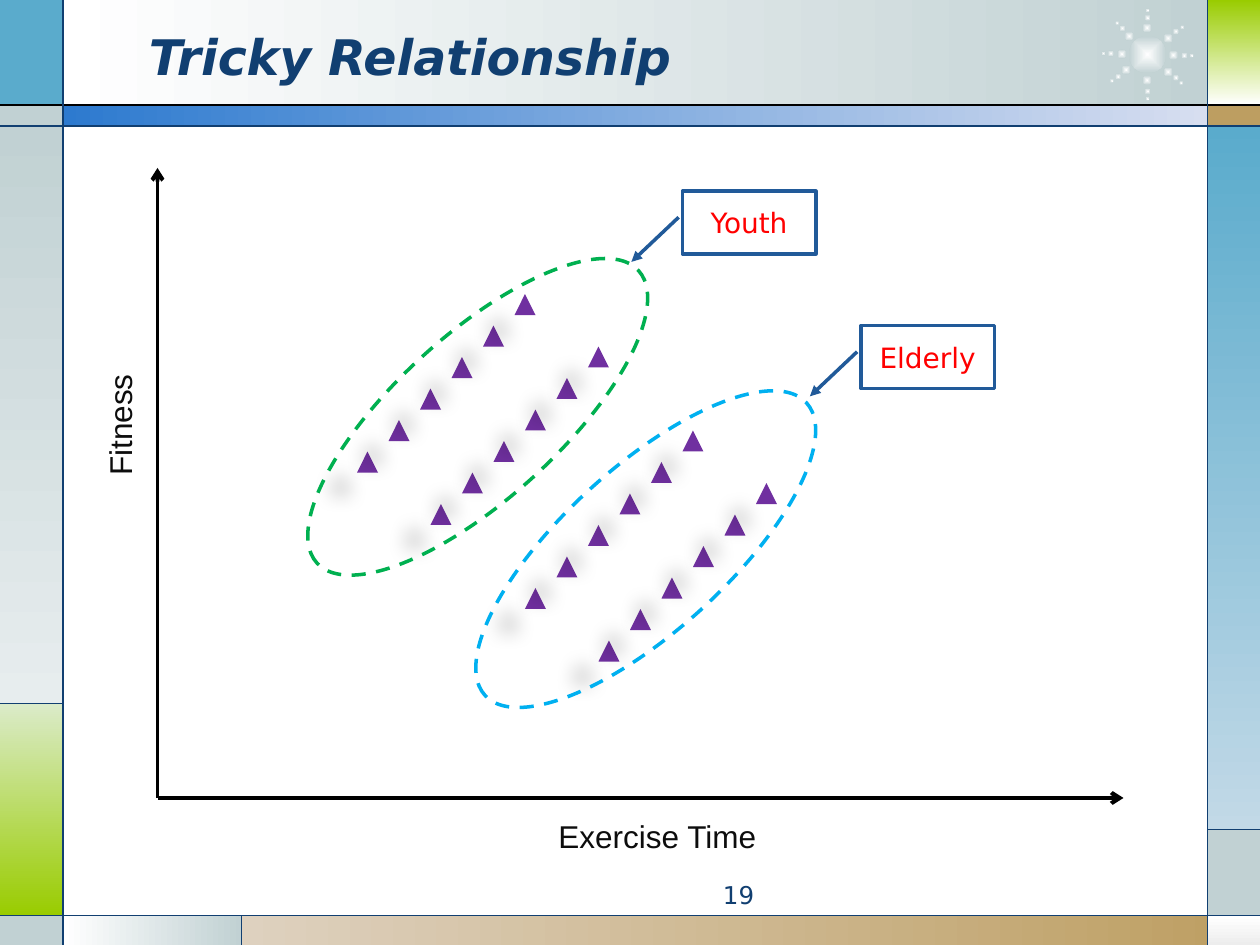
from collections import namedtuple
from math import cos, radians, sin

from lxml.etree import SubElement
from pptx import Presentation
from pptx.dml.color import RGBColor
from pptx.enum.dml import MSO_LINE
from pptx.enum.shapes import MSO_CONNECTOR, MSO_SHAPE
from pptx.enum.text import MSO_ANCHOR, PP_ALIGN
from pptx.oxml.ns import qn
from pptx.util import Emu, Pt

PX = 7620  # 120 px to the inch
Box = namedtuple("Box", "left top width height")

WHITE = RGBColor(0xFF, 0xFF, 0xFF)
BLACK = RGBColor(0x00, 0x00, 0x00)
INK = RGBColor(0x0D, 0x0D, 0x0D)
NAVY = RGBColor(0x11, 0x3F, 0x71)
STEEL = RGBColor(0x21, 0x5A, 0x99)
RED = RGBColor(0xFF, 0x00, 0x00)
PURPLE = RGBColor(0x70, 0x30, 0xA0)
GREEN = RGBColor(0x00, 0xB0, 0x50)
CYAN = RGBColor(0x00, 0xB0, 0xF0)
GREY = RGBColor(0xC1, 0xD1, 0xD3)
PALE_GREY = RGBColor(0xE7, 0xED, 0xEE)
SILVER = RGBColor(0xED, 0xED, 0xED)
SKY = RGBColor(0x5A, 0xAB, 0xCC)
PALE_SKY = RGBColor(0xC2, 0xD9, 0xE7)
LIME = RGBColor(0x99, 0xCC, 0x00)
PALE_LIME = RGBColor(0xDB, 0xEB, 0xC9)
TAN = RGBColor(0xBD, 0x9E, 0x61)
PALE_TAN = RGBColor(0xDE, 0xD1, 0xBF)
BLUE = RGBColor(0x2D, 0x7A, 0xCF)
PALE_BLUE = RGBColor(0xD7, 0xDE, 0xF0)

ACROSS, DOWN = 0, 270  # gradient angles, counter-clockwise
SANS, ARIAL = "DejaVu Sans", "Arial"


def emu(*lengths):
    return [Emu(length * PX) for length in lengths]


def add_shape(shapes, kind, box):
    shape = shapes.add_shape(kind, *emu(*box))
    shape.shadow.inherit = False
    shape.fill.background()
    shape.line.fill.background()
    return shape


def fill_gradient(shape, start, end, angle=ACROSS):
    shape.fill.gradient()
    shape.fill.gradient_angle = angle
    for stop, colour in zip(shape.fill.gradient_stops, (start, end)):
        stop.color.rgb = colour


def fill_radial(shape, centre, rim):
    fill_gradient(shape, centre, rim)
    gradient = shape._element.spPr.find(qn("a:gradFill"))
    gradient.remove(gradient.find(qn("a:lin")))
    radial = SubElement(gradient, qn("a:path"), {"path": "shape"})
    SubElement(radial, qn("a:fillToRect"), dict.fromkeys("ltrb", "50000"))


def add_line(page, start, end, colour, width, arrow=None):
    line = page.shapes.add_connector(MSO_CONNECTOR.STRAIGHT, *emu(*start, *end))
    line.line.color.rgb = colour
    line.line.width = Pt(width)
    if arrow:
        add_arrowhead(line, arrow)
    SubElement(line._element.spPr, qn("a:effectLst"))


def add_arrowhead(shape, kind):
    SubElement(shape.line._get_or_add_ln(), qn("a:tailEnd"), type=kind)


def write(shape, text, size, font, colour, align=PP_ALIGN.LEFT, bold=False, italic=False):
    para = shape.text_frame.paragraphs[0]
    para.text = text
    para.alignment = align
    para.font.size = Pt(size)
    para.font.name = font
    para.font.color.rgb = colour
    para.font.bold = bold
    para.font.italic = italic


def add_text(page, box, text, size, font, colour, wrap=True, anchor=MSO_ANCHOR.TOP, **style):
    label = page.shapes.add_textbox(*emu(*box))
    label.text_frame.word_wrap = wrap
    label.text_frame.vertical_anchor = anchor
    write(label, text, size, font, colour, **style)
    return label


def draw_frame(page, box):
    """Coloured border bands and the thin rules between them."""
    left, right = box.left + 60, box.left + 1150
    head, bar, foot = box.top + 100, box.top + 120, box.top + 872
    lime_top, grey_top, tan_left = box.top + 670, box.top + 790, box.left + 230
    end, bottom = box.left + box.width, box.top + box.height
    bands = [
        (left, box.top, right, head, (WHITE, GREY, ACROSS)),
        (box.left, box.top, left, head, SKY),
        (box.left, head, left, bar, GREY),
        (box.left, bar, left, lime_top, (GREY, PALE_GREY, DOWN)),
        (box.left, lime_top, left, foot, (PALE_LIME, LIME, DOWN)),
        (box.left, foot, left, bottom, GREY),
        (left, foot, tan_left, bottom, (WHITE, GREY, ACROSS)),
        (tan_left, foot, end, bottom, (PALE_TAN, TAN, ACROSS)),
        (right, foot, end, bottom, (WHITE, SILVER, DOWN)),
        (right, grey_top, end, foot, GREY),
        (right, bar, end, grey_top, (SKY, PALE_SKY, DOWN)),
        (right, head, end, bar, TAN),
        (right, box.top, end, head, (LIME, WHITE, DOWN)),
        (left, head, right, bar, (BLUE, PALE_BLUE, ACROSS)),
    ]
    for x1, y1, x2, y2, paint in bands:
        band = add_shape(page.shapes, MSO_SHAPE.RECTANGLE, Box(x1, y1, x2 - x1, y2 - y1))
        if isinstance(paint, RGBColor):
            band.fill.solid()
            band.fill.fore_color.rgb = paint
        else:
            fill_gradient(band, *paint)

    add_line(page, (box.left, head), (end, head), BLACK, 0.75)
    rules = [
        (box.left, bar, end, bar),
        (box.left, foot, end, foot),
        (left, box.top, left, bottom),
        (right, box.top, right, bottom),
        (box.left, lime_top, left, lime_top),
        (tan_left, foot, tan_left, bottom),
        (right, grey_top, end, grey_top),
    ]
    for x1, y1, x2, y2 in rules:
        add_line(page, (x1, y1), (x2, y2), NAVY, 0.75)


def draw_starburst(page, box):
    """A glowing disc with eight arms of three shrinking dots."""
    group = page.shapes.add_group_shape()
    centre_x, centre_y = box.left + box.width / 2, box.top + box.height / 2
    dots = [(0, 0, 36)]
    for angle in (2, 40, 90, 144, 182, 226, 270, 321):
        dots += [(angle, reach, size) for reach, size in ((25, 9), (35, 6), (42, 4))]
    for angle, reach, size in dots:
        x = centre_x + reach * cos(radians(angle)) - size / 2
        y = centre_y + reach * sin(radians(angle)) - size / 2
        dot = add_shape(group.shapes, MSO_SHAPE.OVAL, Box(round(x), round(y), size, size))
        fill_radial(dot, WHITE, GREY)


def draw_axes(page, box):
    origin = (box.left, box.top + box.height)
    add_line(page, origin, (box.left + box.width, origin[1]), BLACK, 2.25, "arrow")
    add_line(page, origin, (box.left, box.top), BLACK, 2.25, "arrow")
    add_text(page, Box(box.left + 370, origin[1] + 12, 215, 48),
             "Exercise Time", 18, ARIAL, INK, wrap=False)
    fitness = add_text(page, Box(box.left - 97, box.top + 220, 122, 48),
                       "Fitness", 18, ARIAL, INK, wrap=False)
    fitness.rotation = 270


def add_marker(page, box):
    marker = add_shape(page.shapes, MSO_SHAPE.ISOSCELES_TRIANGLE, box)
    marker.fill.solid()
    marker.fill.fore_color.rgb = PURPLE
    effects = marker._element.spPr.find(qn("a:effectLst"))
    shadow = SubElement(effects, qn("a:outerShdw"), blurRad=str(Pt(11.8)),
                        dist=str(Pt(19.7)), dir=str(141 * 60000), rotWithShape="0")
    tone = SubElement(shadow, qn("a:srgbClr"), val=str(BLACK))
    SubElement(tone, qn("a:alpha"), val="28000")


def draw_cluster(page, box, colour, markers_at, name, name_at):
    """Two rising rows of markers, a tilted ring in the box and a named callout."""
    for row in range(2):
        for step in range(6):
            add_marker(page, Box(box.left + markers_at[0] + 70 * row + 30 * step,
                                 box.top + markers_at[1] + 50 * row - 30 * step, 20, 20))

    ring = add_shape(page.shapes, MSO_SHAPE.OVAL, box)
    ring.rotation = 317.7
    ring.line.color.rgb = colour
    ring.line.width = Pt(2)
    ring.line.dash_style = MSO_LINE.DASH

    callout = add_shape(page.shapes, MSO_SHAPE.LINE_CALLOUT_1,
                        Box(box.left + name_at[0], box.top + name_at[1], 127, 60))
    for index, value in enumerate((0.417, -0.029, 1.125, -0.383)):
        callout.adjustments[index] = value
    callout.line.color.rgb = STEEL
    callout.line.width = Pt(2)
    add_arrowhead(callout, "triangle")
    frame = callout.text_frame
    frame.margin_left = frame.margin_right = frame.margin_top = frame.margin_bottom = 0
    frame.vertical_anchor = MSO_ANCHOR.MIDDLE
    write(callout, name, 16, SANS, RED, PP_ALIGN.CENTER)


def main():
    deck = Presentation()
    deck.slide_width, deck.slide_height = emu(1200, 900)
    page = deck.slides.add_slide(deck.slide_layouts[6])
    draw_frame(page, Box(0, 0, 1200, 900))
    draw_starburst(page, Box(1049, 8, 88, 88))
    add_text(page, Box(130, 16, 880, 74), "Tricky Relationship", 28, SANS, NAVY,
             anchor=MSO_ANCHOR.MIDDLE, bold=True, italic=True)
    add_text(page, Box(450, 832, 280, 32), "19", 14, SANS, NAVY, align=PP_ALIGN.RIGHT)
    draw_axes(page, Box(150, 160, 920, 600))
    draw_cluster(page, Box(248, 319, 414, 156), GREEN, (92, 111), "Youth", (402, -137))
    draw_cluster(page, Box(408, 445, 414, 156), CYAN, (92, 115), "Elderly", (412, -135))
    deck.save("out.pptx")


if __name__ == "__main__":
    main()
